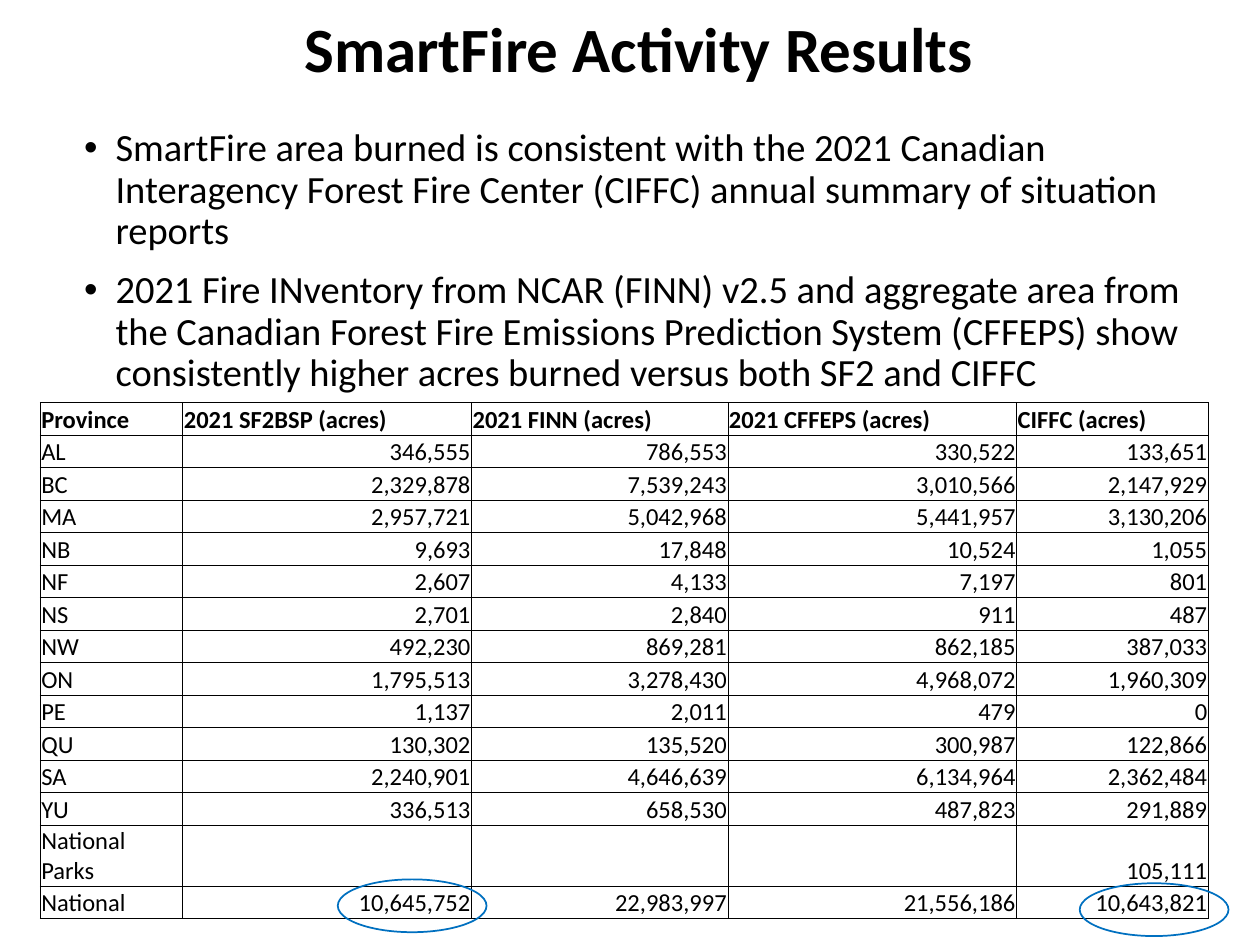
from lxml import etree
from pptx import Presentation
from pptx.dml.color import RGBColor
from pptx.enum import shapes, text
from pptx.oxml import ns
from pptx.util import Pt

FONT = "Calibri"
BLACK = "000000"
BLUE = "0070C0"

TITLE = "SmartFire Activity Results"
FINDINGS = [
    "SmartFire area burned is consistent with the 2021 Canadian Interagency Forest Fire Center "
    "(CIFFC) annual summary of situation reports",
    "2021 Fire INventory from NCAR (FINN) v2.5 and aggregate area from the Canadian Forest Fire "
    "Emissions Prediction System (CFFEPS) show consistently higher acres burned versus both SF2 and CIFFC",
]
ACRES = [
    ("Province", "2021 SF2BSP (acres)", "2021 FINN (acres)", "2021 CFFEPS (acres)", "CIFFC (acres)"),
    ("AL", "346,555", "786,553", "330,522", "133,651"),
    ("BC", "2,329,878", "7,539,243", "3,010,566", "2,147,929"),
    ("MA", "2,957,721", "5,042,968", "5,441,957", "3,130,206"),
    ("NB", "9,693", "17,848", "10,524", "1,055"),
    ("NF", "2,607", "4,133", "7,197", "801"),
    ("NS", "2,701", "2,840", "911", "487"),
    ("NW", "492,230", "869,281", "862,185", "387,033"),
    ("ON", "1,795,513", "3,278,430", "4,968,072", "1,960,309"),
    ("PE", "1,137", "2,011", "479", "0"),
    ("QU", "130,302", "135,520", "300,987", "122,866"),
    ("SA", "2,240,901", "4,646,639", "6,134,964", "2,362,484"),
    ("YU", "336,513", "658,530", "487,823", "291,889"),
    ("National Parks", "", "", "", "105,111"),
    ("National", "10,645,752", "22,983,997", "21,556,186", "10,643,821"),
]
COLUMN_WIDTHS = [81.5, 165, 146.5, 165, 109.5]
ROW_HEIGHT = 18.58
TALL_ROW_HEIGHT = 34.9


def color(hex_string):
    return RGBColor.from_string(hex_string)


def style_font(paragraph, size, bold=False):
    font = paragraph.font
    font.name = FONT
    font.size = Pt(size)
    font.bold = bold
    font.color.rgb = color(BLACK)


def add_text_frame(slide, box, anchor):
    frame = slide.shapes.add_textbox(*map(Pt, box)).text_frame
    frame.word_wrap = True
    frame.vertical_anchor = anchor
    return frame


def add_title(slide, box):
    paragraph = add_text_frame(slide, box, text.MSO_ANCHOR.MIDDLE).paragraphs[0]
    paragraph.text = TITLE
    paragraph.line_spacing = 0.9
    style_font(paragraph, 36, bold=True)


def add_bullet(paragraph, indent):
    properties = paragraph._p.get_or_add_pPr()
    properties.set("marL", str(Pt(indent)))
    properties.set("indent", str(-Pt(indent)))
    etree.SubElement(properties, ns.qn("a:buFont"), typeface="Arial")
    etree.SubElement(properties, ns.qn("a:buChar"), char="•")


def add_findings(slide, box):
    frame = add_text_frame(slide, box, text.MSO_ANCHOR.TOP)
    for index, finding in enumerate(FINDINGS):
        paragraph = frame.add_paragraph() if index else frame.paragraphs[0]
        paragraph.text = finding
        add_bullet(paragraph, 18)
        paragraph.line_spacing = 0.9
        if index:
            paragraph.space_before = Pt(10)
        style_font(paragraph, 22)


def add_borders(cell, width):
    properties = cell._tc.get_or_add_tcPr()
    for side in ("lnL", "lnR", "lnT", "lnB"):
        line = etree.SubElement(properties, ns.qn(f"a:{side}"), w=str(Pt(width)))
        fill = etree.SubElement(line, ns.qn("a:solidFill"))
        etree.SubElement(fill, ns.qn("a:srgbClr"), val=BLACK)


def fill_cell(cell, value, is_header, is_number):
    cell.margin_left = cell.margin_right = cell.margin_top = Pt(0.6)
    cell.margin_bottom = Pt(0)
    cell.vertical_anchor = text.MSO_ANCHOR.BOTTOM
    add_borders(cell, 0.5)
    cell.fill.background()
    paragraph = cell.text_frame.paragraphs[0]
    if value:
        paragraph.text = value
    paragraph.alignment = text.PP_ALIGN.RIGHT if is_number else text.PP_ALIGN.LEFT
    style_font(paragraph, 14, bold=is_header)


def add_acres_table(slide, left, top):
    heights = [TALL_ROW_HEIGHT if row[0] == "National Parks" else ROW_HEIGHT for row in ACRES]
    box = (left, top, sum(COLUMN_WIDTHS), sum(heights))
    table = slide.shapes.add_table(len(ACRES), len(COLUMN_WIDTHS), *map(Pt, box)).table
    table.first_row = table.horz_banding = False
    for column, width in zip(table.columns, COLUMN_WIDTHS):
        column.width = Pt(width)
    for row_index, (values, height) in enumerate(zip(ACRES, heights)):
        table.rows[row_index].height = Pt(height)
        for column_index, value in enumerate(values):
            is_header = row_index == 0
            is_number = not is_header and column_index > 0
            fill_cell(table.cell(row_index, column_index), value, is_header, is_number)


def add_total_ring(slide, box):
    ring = slide.shapes.add_shape(shapes.MSO_SHAPE.OVAL, *map(Pt, box))
    ring.shadow.inherit = False
    ring.fill.background()
    ring.line.color.rgb = color(BLUE)
    ring.line.width = Pt(1)


def main():
    presentation = Presentation()
    presentation.slide_width = Pt(720)
    presentation.slide_height = Pt(540)
    slide = presentation.slides.add_slide(presentation.slide_layouts[6])
    add_acres_table(slide, 23, 230)
    add_title(slide, (167, -22.3, 485.3, 104.4))
    add_findings(slide, (41, 69.8, 656, 229))
    for left, top in ((193, 502.5), (617, 504.7)):
        add_total_ring(slide, (left, top, 85, 30.2))
    presentation.save("out.pptx")


if __name__ == "__main__":
    main()
